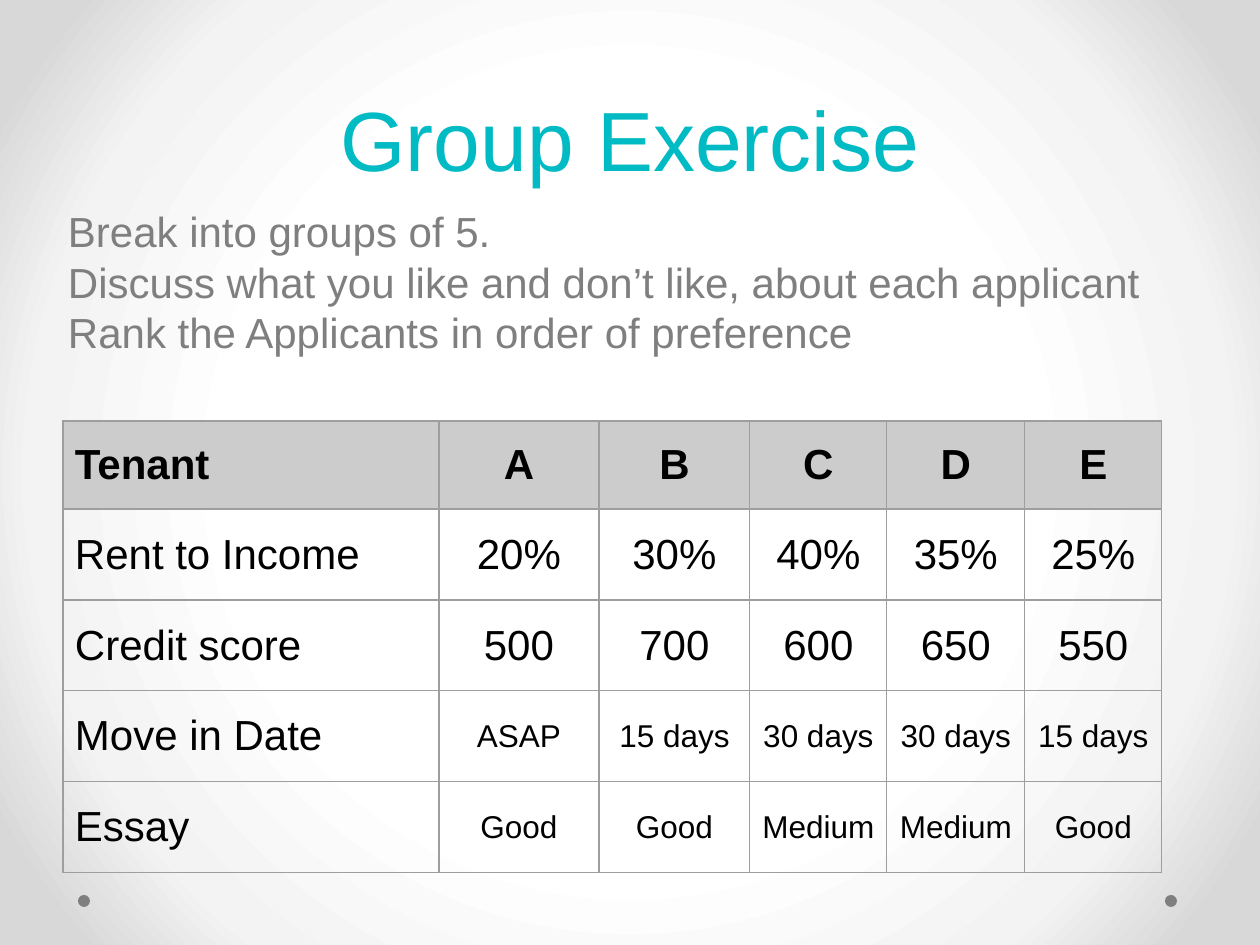
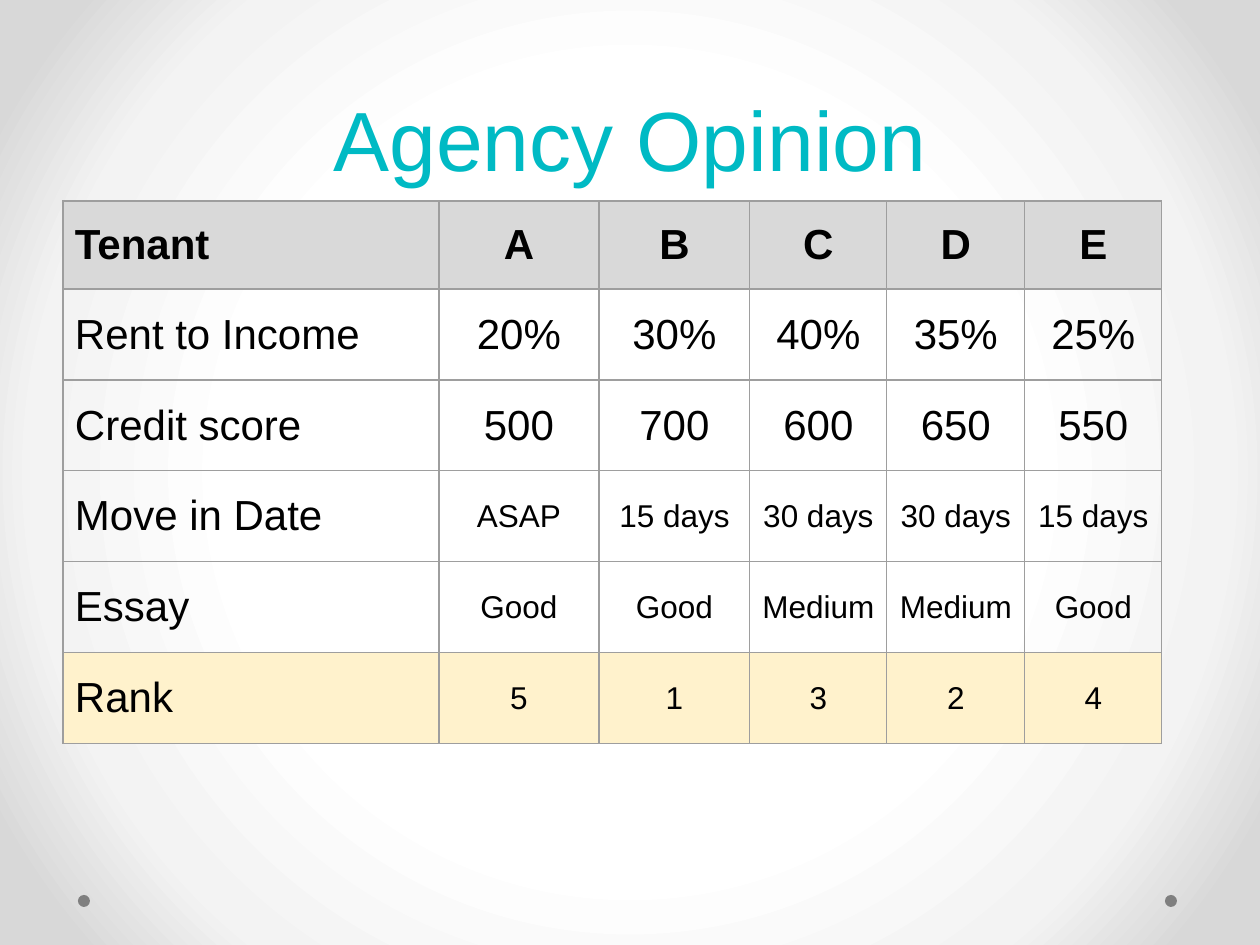
from lxml import etree
from pptx import Presentation
from pptx.dml.color import RGBColor
from pptx.enum.shapes import MSO_SHAPE
from pptx.enum.text import MSO_ANCHOR, PP_ALIGN
from pptx.oxml import parse_xml
from pptx.oxml.ns import nsdecls, qn
from pptx.util import Pt

PX = 914400 / 126
OVAL = MSO_SHAPE.OVAL
TOP, MIDDLE, BOTTOM = MSO_ANCHOR.TOP, MSO_ANCHOR.MIDDLE, MSO_ANCHOR.BOTTOM
LEFT, CENTER = PP_ALIGN.LEFT, PP_ALIGN.CENTER

FONT = "Arial"
TEAL = RGBColor(0x00, 0xBA, 0xC4)
GRAY = RGBColor(0x7F, 0x7F, 0x7F)
BLACK = RGBColor(0x00, 0x00, 0x00)
BORDER = RGBColor(0x9E, 0x9E, 0x9E)
HEADER_GRAY = RGBColor(0xCC, 0xCC, 0xCC)
HEADER_LIGHT = RGBColor(0xD9, 0xD9, 0xD9)
RANK_CREAM = RGBColor(0xFF, 0xF2, 0xCC)
BACKDROP = ((0, "FFFFFF"), (50, "FFFFFF"), (76, "F3F3F3"), (92, "D8D8D8"), (100, "D8D8D8"))

SLIDE_SIZE = (1260, 945)
TITLE_BOX = (63, 18, 1134, 183)
INSTRUCTIONS_BOX = (34, 193, 1134, 213)
DOT_BOXES = ((78, 895, 12, 12), (1165, 895, 12, 12))
COLUMN_WIDTHS = (376, 160, 151, 137, 138, 137)
HEADER_HEIGHT, ROW_HEIGHT = 88, 91
TEXT_INSET, CELL_INSET = 13, 12

INSTRUCTIONS = (
    "Break into groups of 5.",
    "Discuss what you like and don’t like, about each applicant",
    "Rank the Applicants in order of preference",
)
APPLICANTS = (
    ("Tenant", "A", "B", "C", "D", "E"),
    ("Rent to Income", "20%", "30%", "40%", "35%", "25%"),
    ("Credit score", "500", "700", "600", "650", "550"),
    ("Move in Date", "ASAP", "15 days", "30 days", "30 days", "15 days"),
    ("Essay", "Good", "Good", "Medium", "Medium", "Good"),
)
RANKING = ("Rank", "5", "1", "3", "2", "4")


def emu(*lengths):
    """Turn px lengths into EMU."""
    return [round(length * PX) for length in lengths]


def set_all(target, values):
    """Set each named attribute on the target."""
    for name, value in values.items():
        setattr(target, name, value)


def margins(inset):
    """Return equal margins on all four sides."""
    return {f"margin_{side}": emu(inset)[0] for side in ("left", "top", "right", "bottom")}


def write(paragraph, text, size, color, align=LEFT, bold=False, spacing=None):
    """Write one formatted run into a paragraph."""
    set_all(paragraph, {"alignment": align, "line_spacing": spacing})
    run = paragraph.add_run()
    run.text = text
    set_all(run.font, {"name": FONT, "size": Pt(size), "bold": bold})
    run.font.color.rgb = color


def paint_backdrop(master):
    """Give the master a radial gradient that darkens at the edges."""
    master.background.fill.solid()
    solid = master.element.find(".//" + qn("p:bgPr")).find(qn("a:solidFill"))
    stops = "".join(
        f'<a:gs pos="{pos * 1000}"><a:srgbClr val="{color}"/></a:gs>' for pos, color in BACKDROP
    )
    solid.getparent().replace(solid, parse_xml(
        f'<a:gradFill {nsdecls("a")} rotWithShape="1"><a:gsLst>{stops}</a:gsLst>'
        '<a:path path="circle"><a:fillToRect l="50000" t="50000" r="50000" b="50000"/></a:path>'
        "</a:gradFill>"
    ))


def add_title(slide, box, text):
    """Place and format the slide title."""
    title = slide.shapes.title
    set_all(title, dict(zip(("left", "top", "width", "height"), emu(*box))))
    set_all(title.text_frame, {"vertical_anchor": BOTTOM, "word_wrap": True, **margins(TEXT_INSET)})
    write(title.text_frame.paragraphs[0], text, 48, TEAL, CENTER, spacing=1.21)


def add_dots(slide):
    """Draw the pair of footer dots."""
    for box in DOT_BOXES:
        dot = slide.shapes.add_shape(OVAL, *emu(*box))
        dot.shadow.inherit = False
        dot.fill.solid()
        dot.fill.fore_color.rgb = GRAY
        dot.line.fill.background()


def add_instructions(slide, box, lines):
    """Write the exercise steps with a hanging indent."""
    frame = slide.shapes.add_textbox(*emu(*box)).text_frame
    set_all(frame, {"vertical_anchor": TOP, "word_wrap": True, **margins(TEXT_INSET)})
    hanging = dict(zip(("marL", "indent"), emu(48, -27)))
    for index, line in enumerate(lines):
        step = frame.add_paragraph() if index else frame.paragraphs[0]
        write(step, line, 24, GRAY, spacing=1.0)
        for name, value in hanging.items():
            step._p.get_or_add_pPr().set(name, str(value))


def add_borders(cell):
    """Rule all four sides of a table cell."""
    properties = cell._tc.get_or_add_tcPr()
    for index, side in enumerate(("lnL", "lnR", "lnT", "lnB")):
        rule = etree.Element(qn(f"a:{side}"), w=str(Pt(0.75)))
        fill = etree.SubElement(rule, qn("a:solidFill"))
        etree.SubElement(fill, qn("a:srgbClr"), val=str(BORDER))
        properties.insert(index, rule)


def add_applicants(slide, left, top, rows, row_fills):
    """Build the applicant table, filling the rows named in row_fills."""
    heights = [HEADER_HEIGHT] + [ROW_HEIGHT] * (len(rows) - 1)
    box = emu(left, top, sum(COLUMN_WIDTHS), sum(heights))
    table = slide.shapes.add_table(len(rows), len(COLUMN_WIDTHS), *box).table
    set_all(table, {"first_row": False, "horz_banding": False})
    for column, width in zip(table.columns, emu(*COLUMN_WIDTHS)):
        column.width = width
    for row, height in zip(table.rows, emu(*heights)):
        row.height = height
    for r, values in enumerate(rows):
        for c, value in enumerate(values):
            cell = table.cell(r, c)
            set_all(cell, {"vertical_anchor": MIDDLE, **margins(CELL_INSET)})
            size = 18 if r > 2 and c else 24
            write(cell.text_frame.paragraphs[0], value, size, BLACK, CENTER if c else LEFT, r == 0)
            if r in row_fills:
                cell.fill.solid()
                cell.fill.fore_color.rgb = row_fills[r]
            else:
                cell.fill.background()
            add_borders(cell)


def add_base_slide(prs, title):
    """Add a slide with the shared title and dots."""
    slide = prs.slides.add_slide(prs.slide_layouts[5])
    add_dots(slide)
    add_title(slide, TITLE_BOX, title)
    return slide


def main():
    """Build and save the presentation."""
    prs = Presentation()
    prs.slide_width, prs.slide_height = emu(*SLIDE_SIZE)
    paint_backdrop(prs.slide_master)

    exercise = add_base_slide(prs, "Group Exercise")
    add_applicants(exercise, 63, 421, APPLICANTS, {0: HEADER_GRAY})
    add_instructions(exercise, INSTRUCTIONS_BOX, INSTRUCTIONS)

    opinion = add_base_slide(prs, "Agency Opinion")
    ranked = APPLICANTS + (RANKING,)
    add_applicants(opinion, 63, 201, ranked, {0: HEADER_LIGHT, len(APPLICANTS): RANK_CREAM})

    prs.save("out.pptx")


if __name__ == "__main__":
    main()
